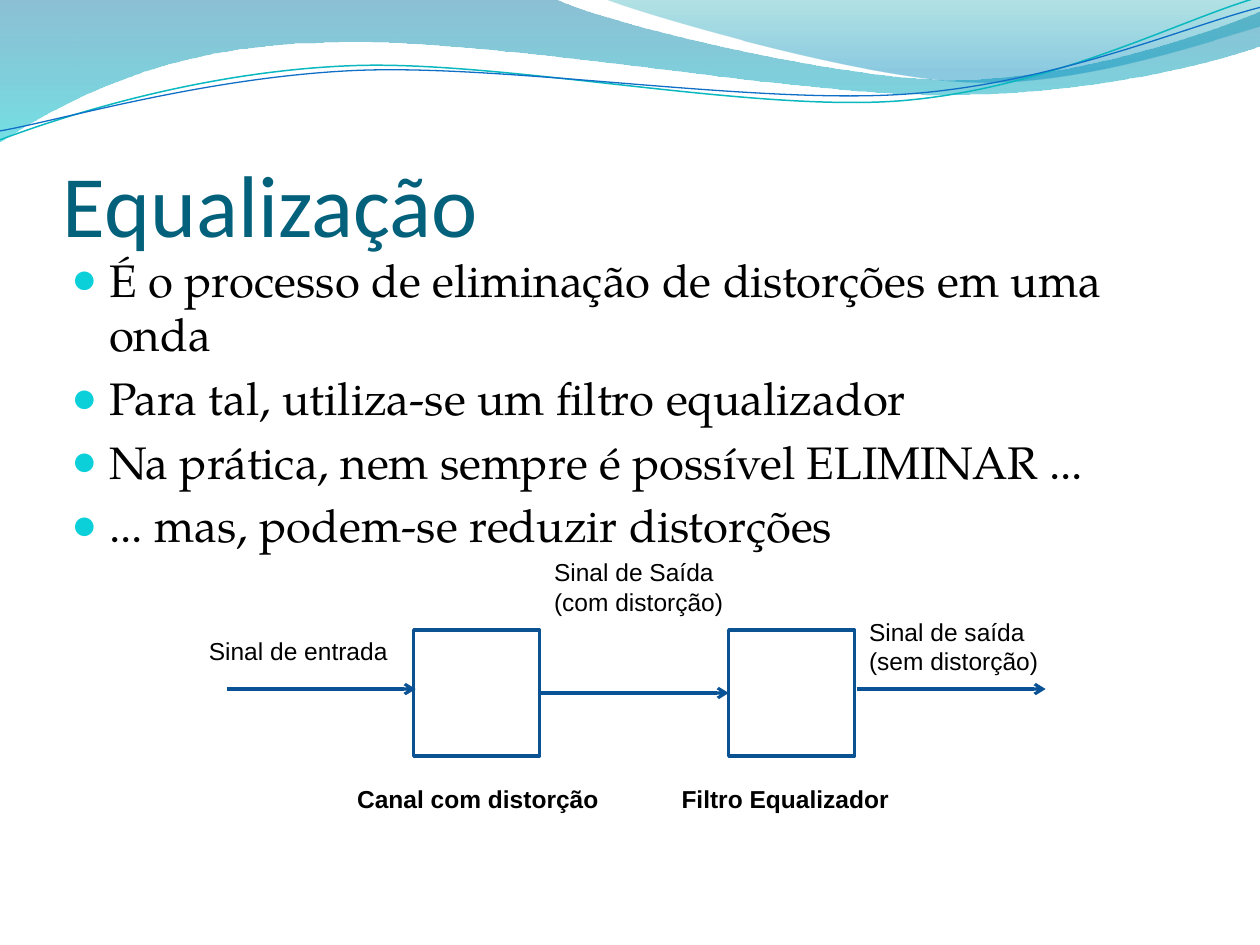
from lxml import etree
from pptx import Presentation
from pptx.dml.color import RGBColor
from pptx.enum.shapes import MSO_CONNECTOR, MSO_SHAPE
from pptx.enum.text import MSO_ANCHOR, MSO_AUTO_SIZE
from pptx.oxml import parse_xml
from pptx.oxml.ns import nsdecls, qn
from pptx.util import Cm, Pt

RECTANGLE = MSO_SHAPE.RECTANGLE
STRAIGHT = MSO_CONNECTOR.STRAIGHT
BOTTOM = MSO_ANCHOR.BOTTOM
GROW = MSO_AUTO_SIZE.SHAPE_TO_FIT_TEXT
COLORS = {
    "title": "04617B", "text": "000000", "bullet": "0BD0D9", "box": "FFFFFF",
    "outline": "0B5292", "arrow": "095295", "teal strand": "0AB8BF", "blue strand": "0F6FC6",
    "deep blue": "0074A1", "cyan": "00C6CF", "teal": "00A1A9", "blue": "008BBF",
}


def add_curve(start, segments, close):
    """Draw segments in cm: two numbers make a line, six make a Bezier curve."""
    builder = page.shapes.build_freeform(Cm(start[0]), Cm(start[1]))
    points = [(Cm(segment[i]), Cm(segment[i + 1]))
              for segment in segments for i in range(0, len(segment), 2)]
    builder.add_line_segments(points, close=close)
    curve = builder.convert_to_shape()
    curve.shadow.inherit = False
    sides = iter(list(curve.element.spPr.iter(qn("a:lnTo"))))
    for segment in segments:
        side = next(sides)
        if len(segment) == 6:
            side.addprevious(bezier := etree.Element(qn("a:cubicBezTo")))
            for part in (side, next(sides), next(sides)):
                bezier.append(part[0])
                part.getparent().remove(part)
    return curve


def add_text(left, top, width, height, lines, font, size, color, bold=False, wrap=False):
    box = page.shapes.add_textbox(Cm(left), Cm(top), Cm(width), Cm(height))
    frame = box.text_frame
    frame.word_wrap = wrap
    for index, line in enumerate(lines):
        para = frame.paragraphs[0] if index == 0 else frame.add_paragraph()
        span = para.add_run()
        span.text = line
        span.font.name = font
        span.font.size = Pt(size)
        span.font.bold = bold
        span.font.color.rgb = RGBColor.from_string(COLORS[color])
    return frame


deck = Presentation()
deck.slide_width, deck.slide_height = Cm(25.4), Cm(19.05)
page = deck.slides.add_slide(deck.slide_layouts[6])

# Filled waves: gradient stops are (position %, colour, opacity %)
waves = [
    ((0, -0.03),
     [(11.18, -0.03), (12.09, 0.43, 16.87, 1.6, 19.25, 1.6),
      (21.67, 1.6, 24.33, 0.66, 25.4, 0.23), (25.43, 0.91),
      (24.97, 1.12, 22.1, 1.93, 18.95, 1.91), (15.8, 1.91, 9.7, 0.71, 6.53, 0.86),
      (3.28, 0.89, 1.17, 2.11, -0.03, 2.87), (0, -0.03)],
     [(0, "deep blue", 45), (100, "cyan", 55)]),
    ((12.17, -0.03),
     [(12.93, 0.28, 17.32, 1.57, 19.53, 1.65), (21.74, 1.75, 24.41, 0.81, 25.4, 0.53),
      (25.4, 0), (12.17, -0.03)],
     [(0, "teal", 30), (80, "blue", 45)]),
]
for start, segments, stops in waves:
    wave = add_curve(start, segments, close=True)
    wave.line.fill.background()
    stop_xml = "".join(
        f'<a:gs pos="{pos * 1000}"><a:srgbClr val="{COLORS[color]}">'
        f'<a:alpha val="{opacity * 1000}"/></a:srgbClr></a:gs>'
        for pos, color, opacity in stops)
    gradient = parse_xml(f'<a:gradFill {nsdecls("a")} rotWithShape="1"><a:gsLst>{stop_xml}'
                         '</a:gsLst><a:lin ang="5400000" scaled="0"/></a:gradFill>')
    wave.element.spPr.find(qn("a:custGeom")).addnext(gradient)

# Thin wave lines, slightly tilted
strands = [
    ((-0.05, 2.22),
     [(1.19, 1.82, 4.02, 1.04, 7.05, 1.06), (10.05, 1.07, 15.02, 2.37, 18.08, 2.29),
      (21.13, 2.2, 23.86, 0.91, 25.41, 0.55)], "teal strand", 0.85),
    ((-0.04, 2.04),
     [(1.16, 1.89, 4.17, 1.15, 7.2, 1.16), (10.25, 1.18, 15.13, 2.22, 18.19, 2.16),
      (21.22, 2.1, 23.93, 1.06, 25.45, 0.75)], "blue strand", 0.75),
]
for start, segments, color, width in strands:
    strand = add_curve(start, segments, close=False)
    strand.rotation = 357.3
    strand.fill.background()
    strand.line.color.rgb = RGBColor.from_string(COLORS[color])
    strand.line.width = Pt(width)

# Title and bullets
title = add_text(1.27, 1.96, 22.86, 3.18, ["Equalização"], "Calibri", 50, "title", wrap=True)
title.vertical_anchor = BOTTOM
title.margin_left = title.margin_right = title.margin_bottom = 0

body = add_text(1.19, 4.95, 22.86, 12.19, [
    "É o processo de eliminação de distorções em uma onda",
    "Para tal, utiliza-se um filtro equalizador",
    "Na prática, nem sempre é possível ELIMINAR ...",
    "... mas, podem-se reduzir distorções",
], "TeX Gyre Pagella", 26, "text", wrap=True)
for para in body.paragraphs:
    props = para._p.get_or_add_pPr()
    props.set("marL", str(Cm(0.76)))
    props.set("indent", str(-Cm(0.76)))
    space = etree.SubElement(props, qn("a:spcBef"))
    etree.SubElement(space, qn("a:spcPct"), val="20000")
    bullet_color = etree.SubElement(props, qn("a:buClr"))
    etree.SubElement(bullet_color, qn("a:srgbClr"), val=COLORS["bullet"])
    etree.SubElement(props, qn("a:buSzPct"), val="95000")
    etree.SubElement(props, qn("a:buFont"), typeface="Arial")
    etree.SubElement(props, qn("a:buChar"), char="●")

# Block diagram
blocks = []
for left in (8.34, 14.69):
    block = page.shapes.add_shape(RECTANGLE, Cm(left), Cm(12.7), Cm(2.54), Cm(2.54))
    block.shadow.inherit = False
    block.fill.solid()
    block.fill.fore_color.rgb = RGBColor.from_string(COLORS["box"])
    block.line.color.rgb = RGBColor.from_string(COLORS["outline"])
    block.line.width = Pt(2)
    blocks.append(block)
channel, equalizer = blocks

arrows = []
for left, y in ((10.88, 13.97), (4.57, 13.89), (17.27, 13.89)):
    arrow = page.shapes.add_connector(STRAIGHT, Cm(left), Cm(y), Cm(left + 3.81), Cm(y))
    arrow.line.color.rgb = RGBColor.from_string(COLORS["arrow"])
    arrow.line.width = Pt(1.75)
    etree.SubElement(arrow.line._get_or_add_ln(), qn("a:tailEnd"), type="arrow")
    etree.SubElement(arrow.element.spPr, qn("a:effectLst"))
    arrows.append(arrow)
arrows[0].begin_connect(channel, 3)
arrows[0].end_connect(equalizer, 1)

labels = [
    (3.96, 12.7, 4.14, 0.86, ["Sinal de entrada"], False),
    (6.95, 15.68, 5.41, 0.86, ["Canal com distorção"], True),
    (10.92, 11.11, 3.94, 1.45, ["Sinal de Saída", "(com distorção)"], False),
    (13.49, 15.68, 4.72, 0.86, ["Filtro Equalizador"], True),
    (17.27, 12.31, 3.94, 1.45, ["Sinal de saída", "(sem distorção)"], False),
]
for left, top, width, height, lines, bold in labels:
    label = add_text(left, top, width, height, lines, "Arial", 14, "text", bold)
    label.auto_size = GROW

deck.save("out.pptx")
